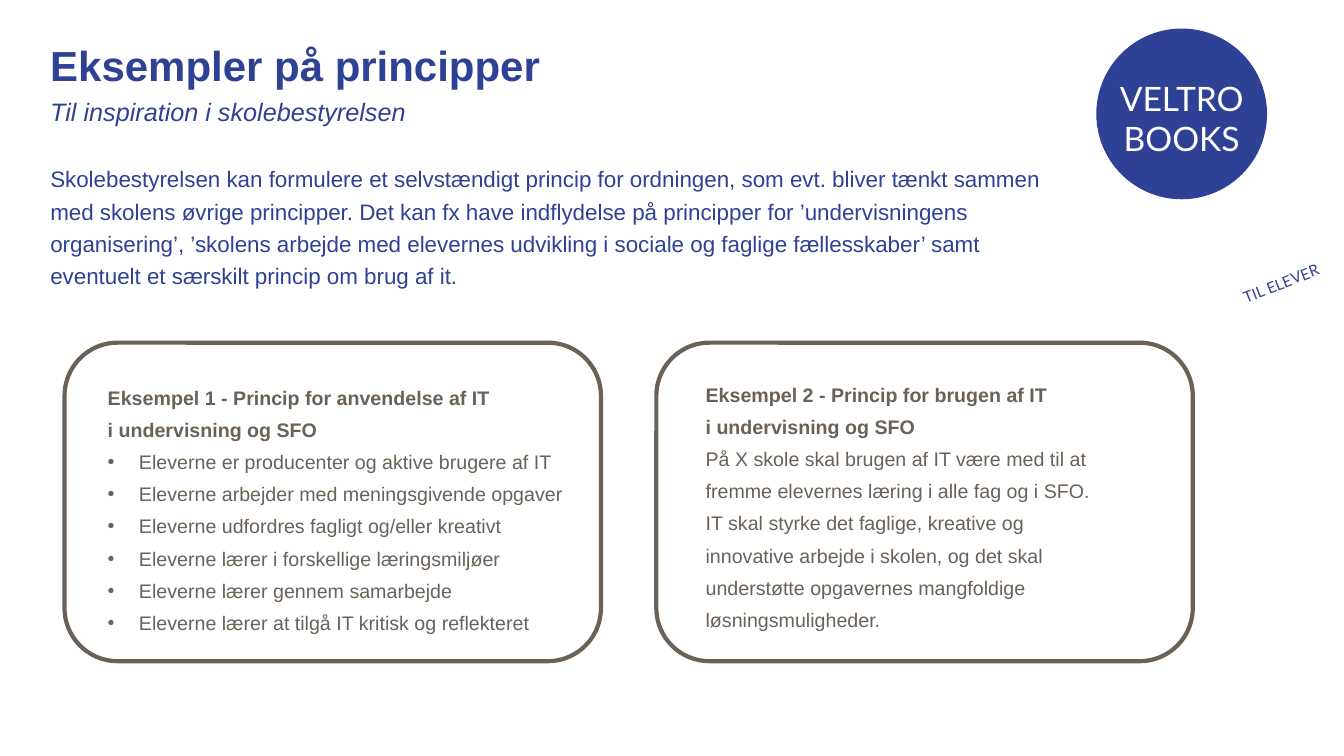
from lxml import etree
from pptx import Presentation
from pptx import util as u
from pptx.dml.color import RGBColor
from pptx.enum import shapes, text
from pptx.oxml import ns

COLORS = {"blue": "2E4194", "side": "314194", "brown": "6A6158", "white": "FFFFFF"}
LINE_PITCH = u.Pt(23)
BULLET_INDENT = u.Inches(0.31)


def rgb(name):
    return RGBColor.from_string(COLORS[name])


def add_box(s, left, top, width, height):
    """Add an empty wrapping text box and return it."""
    sp = s.shapes.add_textbox(*map(u.Inches, (left, top, width, height)))
    sp.text_frame.word_wrap = True
    return sp


def write(p, content, size, color, font="Arial", bold=False, italic=False, spacing=None):
    """Write runs into a paragraph, one for each line of content."""
    if spacing:
        p.line_spacing = spacing
    for i, line in enumerate(content.split("\n")):
        if i:
            p.add_line_break()
        r = p.add_run()
        r.text = line
        r.font.name, r.font.size = font, u.Pt(size)
        r.font.bold, r.font.italic = bold, italic
        r.font.color.rgb = rgb(color)


def add_bullet(p):
    pPr = p._p.get_or_add_pPr()
    pPr.set("marL", str(BULLET_INDENT))
    pPr.set("indent", str(-BULLET_INDENT))
    etree.SubElement(pPr, ns.qn("a:buFont")).set("typeface", "Arial")
    etree.SubElement(pPr, ns.qn("a:buChar")).set("char", "•")


def add_badge(s, left, top, size, words):
    sp = s.shapes.add_shape(shapes.MSO_SHAPE.OVAL, *map(u.Inches, (left, top, size, size)))
    sp.shadow.inherit = False
    sp.fill.solid()
    sp.fill.fore_color.rgb = rgb("blue")
    sp.line.color.rgb = rgb("blue")
    sp.line.width = u.Pt(1)
    tf = add_box(s, left, top + 0.43, size, 0.91).text_frame
    for i, word in enumerate(words):
        p = tf.add_paragraph() if i else tf.paragraphs[0]
        p.alignment = text.PP_ALIGN.CENTER
        write(p, word, 24, "white", "Lato")


def add_side_label(s, left, top, width, height):
    sp = add_box(s, left, top, width, height)
    sp.rotation = 338.6
    write(sp.text_frame.paragraphs[0], "TIL ELEVER", 11, "side", "Lato")


def add_header(s, left, top, width):
    """Add the title, the subtitle and the introduction below them."""
    title = add_box(s, left, top, width, 0.5).text_frame.paragraphs[0]
    write(title, "Eksempler på principper", 30, "blue", bold=True, spacing=0.9)
    subtitle = add_box(s, left, top + 0.54, width, 0.5).text_frame.paragraphs[0]
    write(subtitle, "Til inspiration i skolebestyrelsen", 18, "blue", italic=True, spacing=0.9)
    intro = add_box(s, left, top + 1.14, width - 0.41, 1.36).text_frame.paragraphs[0]
    write(intro, "Skolebestyrelsen kan formulere et selvstændigt princip for ordningen, "
          "som evt. bliver tænkt sammen med skolens øvrige principper. Det kan fx have "
          "indflydelse på principper for ’undervisningens organisering’, ’skolens arbejde "
          "med elevernes udvikling i sociale og faglige fællesskaber’ samt eventuelt et "
          "særskilt princip om brug af it.", 16, "blue", spacing=LINE_PITCH)


def add_example(s, left, top, inset, text_width, heading, body, bulleted=False):
    """Add a rounded frame with a heading and body; inset is the text's (x, y) offset."""
    sp = s.shapes.add_shape(shapes.MSO_SHAPE.ROUNDED_RECTANGLE,
                            *map(u.Inches, (left, top, 5.32, 3.16)))
    sp.shadow.inherit = False
    sp.fill.background()
    sp.line.color.rgb = rgb("brown")
    sp.line.width = u.Pt(3)
    tf = add_box(s, left + inset[0], top + inset[1], text_width, 2.65).text_frame
    write(tf.paragraphs[0], heading, 14, "brown", bold=True, spacing=LINE_PITCH)
    for item in body:
        p = tf.add_paragraph()
        if bulleted:
            add_bullet(p)
        write(p, item, 14, "brown", spacing=LINE_PITCH)


def main():
    prs = Presentation()
    prs.slide_width, prs.slide_height = u.Inches(13.33), u.Inches(7.5)
    s = prs.slides.add_slide(prs.slide_layouts[6])
    add_badge(s, 10.88, 0.29, 1.68, ["VELTRO", "BOOKS"])
    add_side_label(s, 12.2, 2.6, 1.36, 0.29)
    add_header(s, 0.4, 0.4, 10.5)
    add_example(s, 0.64, 3.4, (0.33, 0.29), 4.78,
                "Eksempel 1 - Princip for anvendelse af IT\ni undervisning og SFO",
                ["Eleverne er producenter og aktive brugere af IT",
                 "Eleverne arbejder med meningsgivende opgaver",
                 "Eleverne udfordres fagligt og/eller kreativt",
                 "Eleverne lærer i forskellige læringsmiljøer",
                 "Eleverne lærer gennem samarbejde",
                 "Eleverne lærer at tilgå IT kritisk og reflekteret"], bulleted=True)
    add_example(s, 6.51, 3.4, (0.39, 0.26), 4.12,
                "Eksempel 2 - Princip for brugen af IT\ni undervisning og SFO",
                ["På X skole skal brugen af IT være med til at fremme elevernes læring i alle "
                 "fag og i SFO. IT skal styrke det faglige, kreative og innovative arbejde i "
                 "skolen, og det skal understøtte opgavernes mangfoldige løsningsmuligheder."])
    prs.save("out.pptx")


if __name__ == "__main__":
    main()
